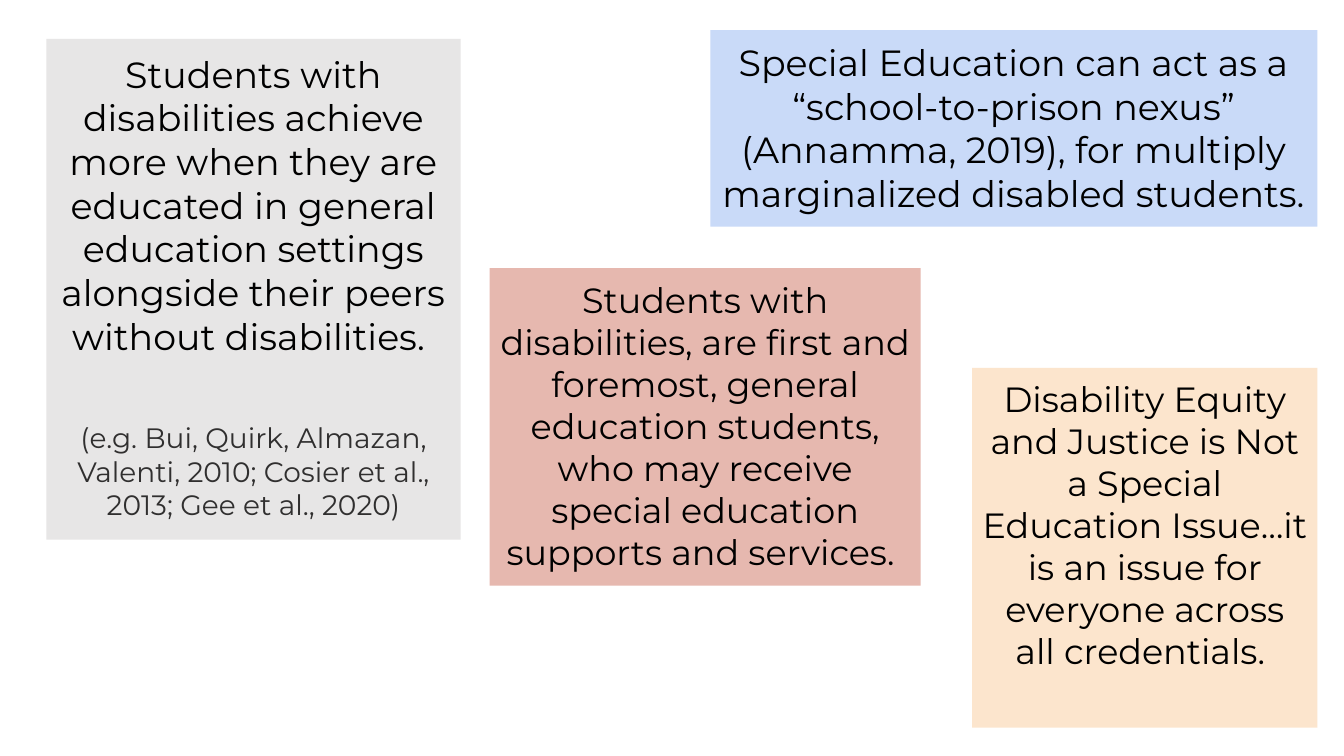
from pptx import Presentation
from pptx.dml.color import RGBColor
from pptx.enum import shapes, text
from pptx.util import Cm, Pt

FONT = "Montserrat"
BLACK = RGBColor(0x00, 0x00, 0x00)
CHARCOAL = RGBColor(0x30, 0x2F, 0x2F)
GREY = RGBColor(0xE7, 0xE6, 0xE6)
BLUE = RGBColor(0xC9, 0xDA, 0xF8)
ROSE = RGBColor(0xE6, 0xB8, 0xAF)
PEACH = RGBColor(0xFC, 0xE5, 0xCD)


def style_paragraph(p, wording, size, color):
    p.text = wording
    p.alignment = text.PP_ALIGN.CENTER
    p.font.name = FONT
    p.font.size = Pt(size)
    p.font.color.rgb = color


def add_card(slide, box, fill, wording, size, inset=0.25):
    """Add a filled statement card; box and inset are in centimetres."""
    sp = slide.shapes.add_shape(shapes.MSO_SHAPE.RECTANGLE, *map(Cm, box))
    sp.shadow.inherit = False
    sp.fill.solid()
    sp.fill.fore_color.rgb = fill
    sp.line.fill.background()
    tf = sp.text_frame
    tf.word_wrap = True
    tf.vertical_anchor = text.MSO_ANCHOR.TOP
    tf.margin_left = tf.margin_right = Cm(inset)
    tf.margin_top = tf.margin_bottom = Cm(inset)
    style_paragraph(tf.paragraphs[0], wording, size, BLACK)
    return tf


def add_citation(tf, wording):
    p = tf.add_paragraph()
    style_paragraph(p, wording, 20, CHARCOAL)
    p.space_before = Pt(45)


def build_statements(slide):
    achievement = add_card(
        slide, (1.17, 0.98, 10.44, 12.62), GREY,
        "Students with disabilities achieve more when they are educated in "
        "general education settings alongside their peers without "
        "disabilities. ", 26, inset=0.33)
    add_citation(achievement, "(e.g. Bui, Quirk, Almazan, Valenti, 2010; "
                              "Cosier et al., 2013; Gee et al., 2020)")
    add_card(
        slide, (17.9, 0.76, 15.3, 4.95), BLUE,
        "Special Education can act as a “school-to-prison nexus” "
        "(Annamma, 2019), for multiply marginalized disabled students. ", 26)
    add_card(
        slide, (12.34, 6.76, 10.86, 8), ROSE,
        "Students with disabilities, are first and foremost, general "
        "education students, who may receive special education supports "
        "and services. ", 25)
    add_card(
        slide, (24.5, 9.27, 8.7, 9.07), PEACH,
        "Disability Equity and Justice is Not a Special Education Issue…it "
        "is an issue for everyone across all credentials. ", 25)


def main():
    prs = Presentation()
    prs.slide_width, prs.slide_height = Cm(33.87), Cm(19.05)
    build_statements(prs.slides.add_slide(prs.slide_layouts[6]))
    prs.save("out.pptx")


if __name__ == "__main__":
    main()
